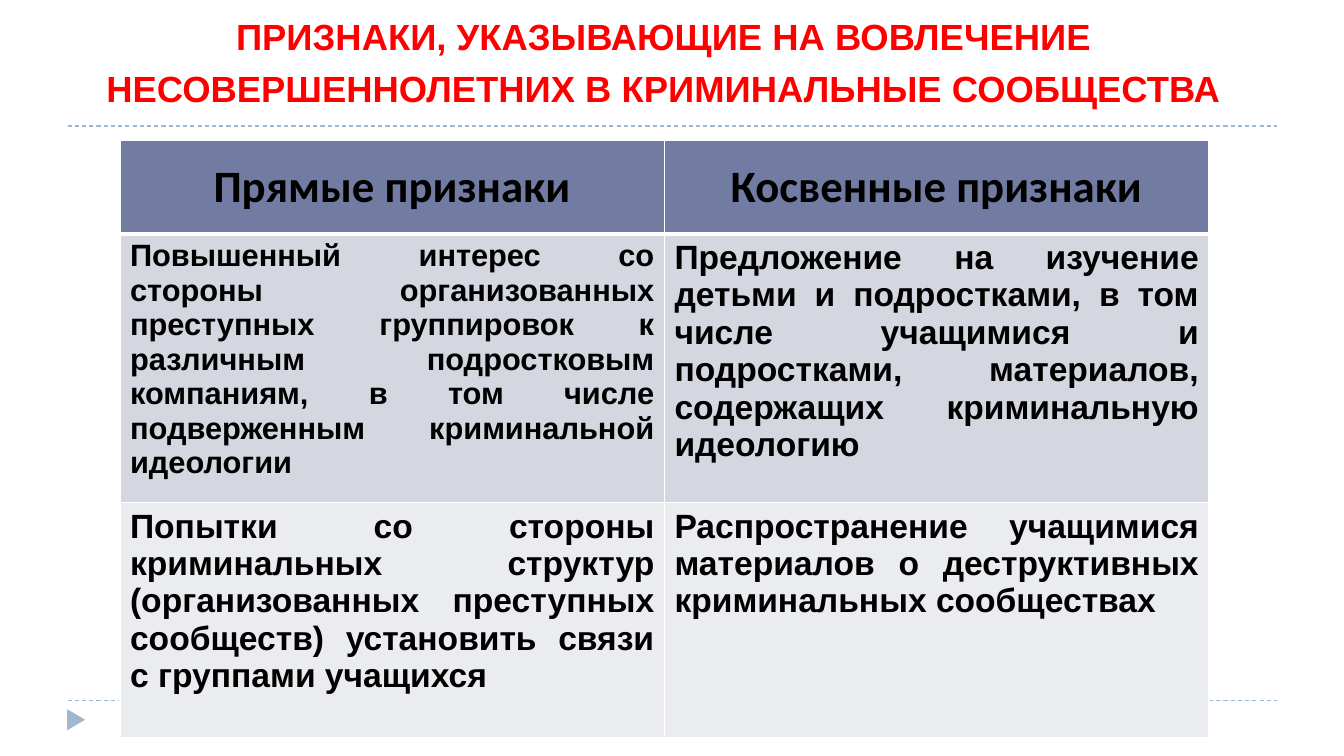
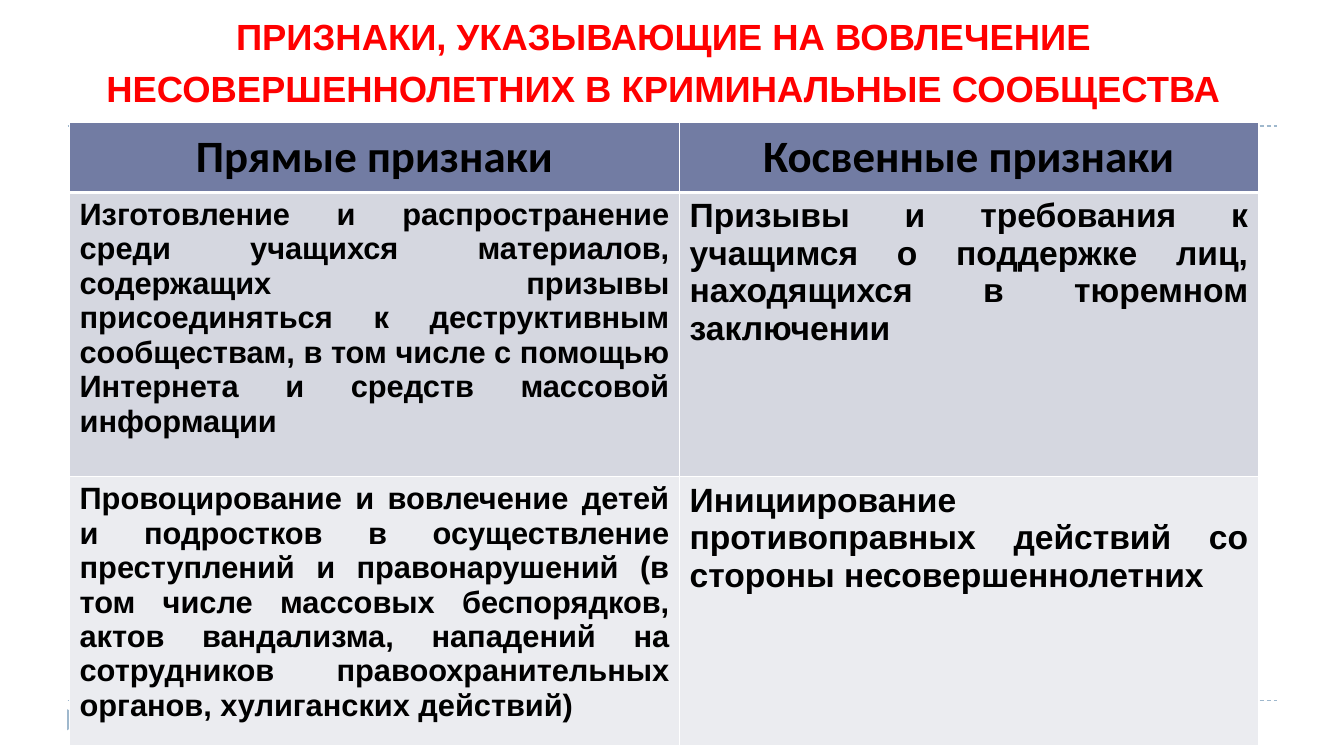
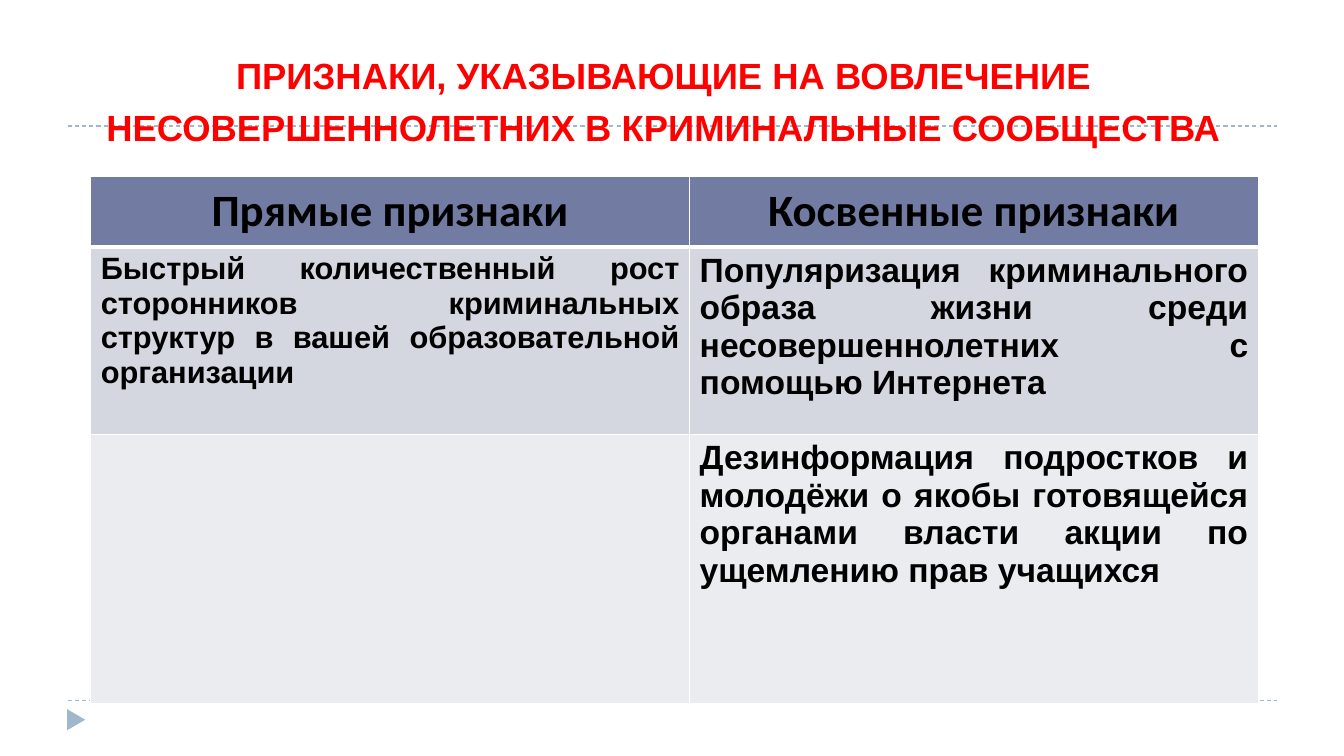
from pptx import Presentation
from pptx.dml.color import RGBColor
from pptx.enum.dml import MSO_LINE
from pptx.enum.shapes import MSO_CONNECTOR, MSO_SHAPE
from pptx.enum.text import MSO_ANCHOR, PP_ALIGN
from pptx.oxml.ns import qn
from pptx.util import Inches, Pt
from lxml import etree

DASH, STRAIGHT, TRIANGLE = MSO_LINE.DASH, MSO_CONNECTOR.STRAIGHT, MSO_SHAPE.ISOSCELES_TRIANGLE
TOP, MIDDLE = MSO_ANCHOR.TOP, MSO_ANCHOR.MIDDLE
CENTER, JUSTIFY = PP_ALIGN.CENTER, PP_ALIGN.JUSTIFY

# Content: one dict per slide, lengths in inches
TITLE = "ПРИЗНАКИ, УКАЗЫВАЮЩИЕ НА ВОВЛЕЧЕНИЕ НЕСОВЕРШЕННОЛЕТНИХ В КРИМИНАЛЬНЫЕ СООБЩЕСТВА"
HEADINGS = ("Прямые признаки", "Косвенные признаки")
SLIDES = [
    {
        "title_top": 0, "corner": (1.19, 1.39),
        "columns": (5.4, 5.4), "rows": (0.93, 2.48, 2.33),
        "signs": [
            (("Повышенный интерес со стороны организованных преступных группировок к различным "
              "подростковым компаниям, в том числе подверженным криминальной идеологии", "small"),
             ("Предложение на изучение детьми и подростками, в том числе учащимися и подростками, "
              "материалов, содержащих криминальную идеологию", "body")),
            (("Попытки со стороны криминальных структур (организованных преступных сообществ) "
              "установить связи с группами учащихся", "body"),
             ("Распространение учащимися материалов о деструктивных криминальных сообществах", "body")),
        ],
    },
    {
        "title_top": 0, "corner": (0.69, 1.21),
        "columns": (6.05, 5.74), "rows": (0.7, 2.82, 2.58),
        "signs": [
            (("Изготовление и распространение среди учащихся материалов, содержащих призывы "
              "присоединяться к деструктивным сообществам, в том числе с помощью Интернета "
              "и средств массовой информации", "small"),
             ("Призывы и требования к учащимся о поддержке лиц, находящихся в тюремном "
              "заключении", "body")),
            (("Провоцирование и вовлечение детей и подростков в осуществление преступлений и "
              "правонарушений (в том числе массовых беспорядков, актов вандализма, нападений на "
              "сотрудников правоохранительных органов, хулиганских действий)", "small"),
             ("Инициирование противоправных действий со стороны несовершеннолетних", "body")),
        ],
    },
    {
        "title_top": 0.39, "corner": (0.9, 1.75),
        "columns": (5.94, 5.64), "rows": (0.7, 1.86, 2.67),
        "signs": [
            (("Быстрый количественный рост сторонников криминальных структур в вашей "
              "образовательной организации", "small"),
             ("Популяризация криминального образа жизни среди несовершеннолетних с помощью "
              "Интернета", "body")),
            (("", "body"),
             ("Дезинформация подростков и молодёжи о якобы готовящейся органами власти акции по "
              "ущемлению прав учащихся", "body")),
        ],
    },
]

# Theme
THEME = {
    "size": (13.33, 7.5),
    "accent": "9FB8CD",
    "border": "FFFFFF",
    "row_fills": ("727CA3", "D5D7E0", "EBECF0"),
    "title": {"name": "Arial", "size": 26, "color": "FF0000"},
    "heading": {"name": "Calibri", "size": 32, "color": "000000"},
    "body": {"name": "Arial", "size": 24, "color": "000000"},
    "small": {"name": "Arial", "size": 22, "color": "000000"},
}
RULE_LEFT, RULE_RIGHT, RULE_TOPS = 0.67, 12.67, (6.95, 1.25)
MARKER = (0.65, 7.05, 0.21, 0.18)
TITLE_LEFT, TITLE_WIDTH, TITLE_HEIGHT = 0.69, 11.79, 1


def inches(*lengths):
    return [Inches(length) for length in lengths]


def write(para, text, style, **layout):
    for name, value in layout.items():
        setattr(para, name, value)
    look = THEME[style]
    span = para.add_run()
    span.text = text
    font_format = {"name": look["name"], "size": Pt(look["size"]), "bold": True}
    for name, value in font_format.items():
        setattr(span.font, name, value)
    span.font.color.rgb = RGBColor.from_string(look["color"])


def add_frame(page):
    """Dashed rules and the corner marker."""
    accent = RGBColor.from_string(THEME["accent"])
    for top in RULE_TOPS:
        rule = page.shapes.add_connector(STRAIGHT, *inches(RULE_LEFT, top, RULE_RIGHT, top))
        rule.line.color.rgb = accent
        rule.line.width = Pt(0.75)
        rule.line.dash_style = DASH
        etree.SubElement(rule.element.spPr, qn("a:effectLst"))
    marker = page.shapes.add_shape(TRIANGLE, *inches(*MARKER))
    marker.rotation = 90
    marker.shadow.inherit = False
    marker.fill.solid()
    marker.fill.fore_color.rgb = accent
    marker.line.fill.background()


def add_title(page, top):
    box = page.shapes.add_textbox(*inches(TITLE_LEFT, top, TITLE_WIDTH, TITLE_HEIGHT))
    box.text_frame.word_wrap = True
    box.text_frame.vertical_anchor = TOP
    write(box.text_frame.paragraphs[0], TITLE, "title",
          alignment=CENTER, line_spacing=1.2, space_before=Pt(10))


def set_borders(cell, widths):
    """Borders come before the fill in the cell properties."""
    properties = cell._tc.get_or_add_tcPr()
    for index, (side, width) in enumerate(widths.items()):
        edge = etree.Element(qn(f"a:ln{side}"), w=str(Pt(width)))
        fill = etree.SubElement(edge, qn("a:solidFill"))
        etree.SubElement(fill, qn("a:srgbClr"), val=THEME["border"])
        properties.insert(index, edge)


def add_signs(page, content):
    columns, rows = content["columns"], content["rows"]
    grid = page.shapes.add_table(
        len(rows), len(columns),
        *inches(*content["corner"], sum(columns), sum(rows))).table
    for column, width in zip(grid.columns, columns):
        column.width = Inches(width)
    for row, height in zip(grid.rows, rows):
        row.height = Inches(height)

    lines = [[(heading, "heading") for heading in HEADINGS], *content["signs"]]
    for row_index, line in enumerate(lines):
        is_header = row_index == 0
        for column_index, (text, style) in enumerate(line):
            cell = grid.cell(row_index, column_index)
            cell.fill.solid()
            cell.fill.fore_color.rgb = RGBColor.from_string(THEME["row_fills"][row_index])
            cell.vertical_anchor = MIDDLE if is_header else TOP
            set_borders(cell, {"L": 1, "R": 1, "T": 3 if row_index == 1 else 1,
                               "B": 3 if is_header else 1})
            if text:
                write(cell.text_frame.paragraphs[0], text, style,
                      alignment=CENTER if is_header else JUSTIFY)


def main():
    deck = Presentation()
    deck.slide_width, deck.slide_height = inches(*THEME["size"])
    for content in SLIDES:
        page = deck.slides.add_slide(deck.slide_layouts[6])
        add_frame(page)
        add_title(page, content["title_top"])
        add_signs(page, content)
    deck.save("out.pptx")


if __name__ == "__main__":
    main()
